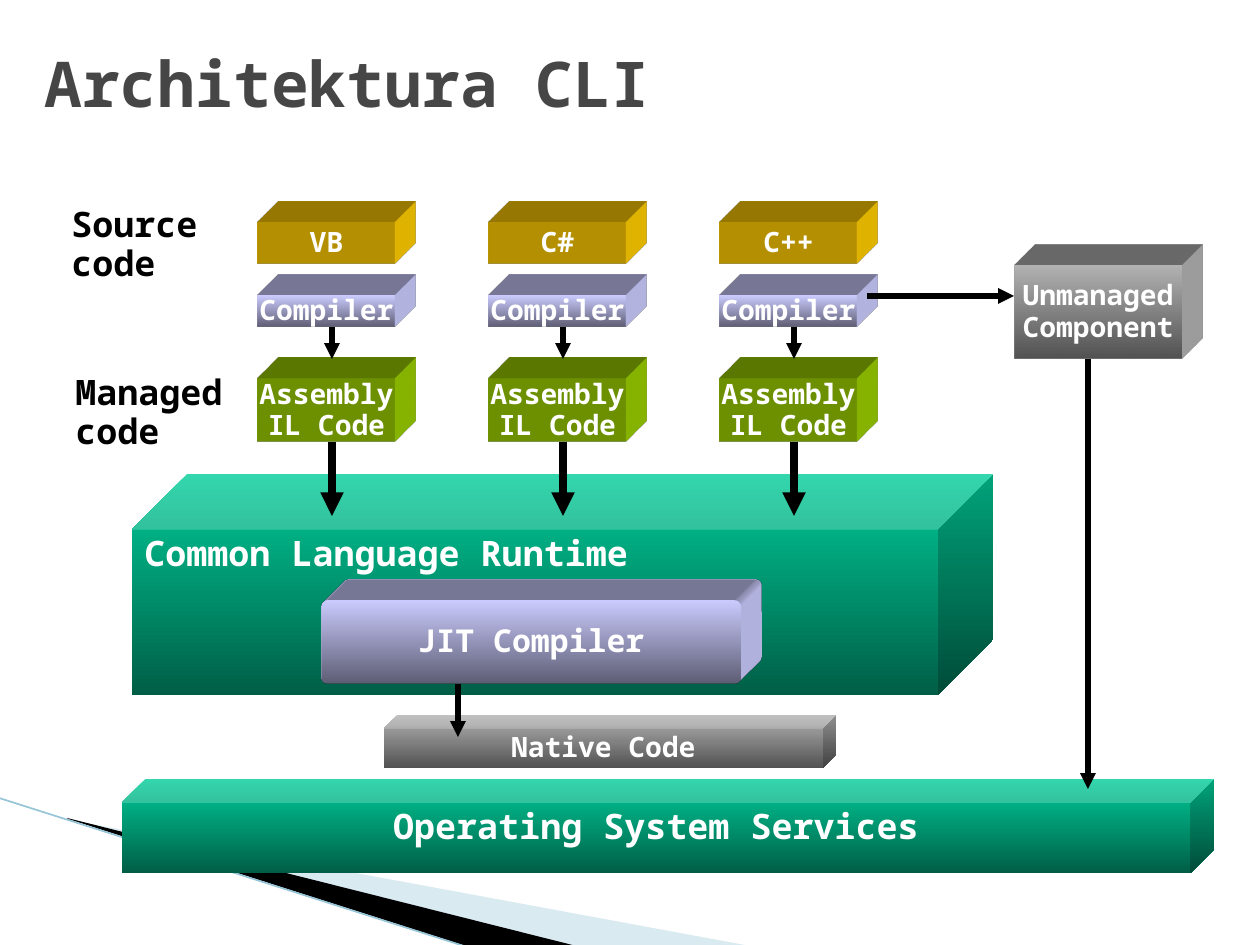
from dataclasses import dataclass

from lxml import etree
from pptx import Presentation
from pptx import util as u
from pptx.dml.color import RGBColor
from pptx.enum import shapes, text
from pptx.oxml import parse_xml
from pptx.oxml.ns import nsdecls, qn

PX = 914400 / 126  # EMU in one px


@dataclass(frozen=True)
class Theme:
    font: str = "Noto Sans Mono"
    white: str = "FFFFFF"
    black: str = "000000"
    grey: str = "464646"
    gold: str = "FFCC00"
    lime: str = "99CC00"
    pale: str = "A0CBDC"
    edge: str = "97C5D8"
    lilac: tuple = ("CCCCFF", "5E5E75")
    teal: tuple = ("00CC99", "005E46")
    steel: tuple = ("B2B2B2", "525252")
    title: int = 36
    large: int = 20
    mid: int = 18
    small: int = 16
    spacing: float = 0.93


def emu(*lengths):
    return [round(n * PX) for n in lengths]


def rgb(color):
    return RGBColor.from_string(color)


class Deck:
    def __init__(self, theme):
        self.theme = theme
        self.file = Presentation()
        self.file.slide_width, self.file.slide_height = emu(1260, 945)
        self.slide = self.file.slides.add_slide(self.file.slide_layouts[6])
        self.shapes = self.slide.shapes

    def letter(self, shape, words, size, color, align, anchor, wrap=False, spacing=None):
        """Set the styled words into a shape."""
        frame = shape.text_frame
        frame.word_wrap = wrap
        frame.vertical_anchor = anchor
        frame.text = words
        for par in frame.paragraphs:
            par.alignment = align
            par.line_spacing = spacing or self.theme.spacing
            par.font.name = self.theme.font
            par.font.size = u.Pt(size)
            par.font.bold = True
            par.font.color.rgb = rgb(color)

    def label(self, box, words, size, color, anchor=text.MSO_ANCHOR.TOP, spacing=None):
        shape = self.shapes.add_textbox(*emu(*box))
        self.letter(shape, words, size, color, text.PP_ALIGN.LEFT, anchor, True, spacing)

    def paint(self, shape, color):
        """Fill with one colour, or top to bottom with a pair."""
        shape.shadow.inherit = False
        shape.line.fill.background()
        if isinstance(color, str):
            shape.fill.solid()
            shape.fill.fore_color.rgb = rgb(color)
            return
        shape.fill.gradient()
        shape.fill.gradient_angle = 270
        for stop, tone in zip(shape.fill.gradient_stops, color):
            stop.color.rgb = rgb(tone)

    def cube(self, box, words, color, size, align=text.PP_ALIGN.CENTER,
             anchor=text.MSO_ANCHOR.TOP):
        shape = self.shapes.add_shape(shapes.MSO_SHAPE.CUBE, *emu(*box))
        self.paint(shape, color)
        self.letter(shape, words, size, self.theme.white, align, anchor)

    def block(self, box, words, color, size, corner=0):
        """Draw a rectangle extruded to the top right."""
        shape = self.shapes.add_shape(shapes.MSO_SHAPE.ROUNDED_RECTANGLE, *emu(*box))
        shape.adjustments[0] = corner
        self.paint(shape, color)
        side = color if isinstance(color, str) else color[0]
        props = shape.element.spPr
        props.append(parse_xml(
            f'<a:scene3d {nsdecls("a")}><a:camera prst="legacyObliqueTopRight"/>'
            '<a:lightRig rig="legacyFlat3" dir="b"/></a:scene3d>'))
        props.append(parse_xml(
            f'<a:sp3d {nsdecls("a")} extrusionH="430200" prstMaterial="legacyMatte">'
            f'<a:extrusionClr><a:srgbClr val="{side}"/></a:extrusionClr></a:sp3d>'))
        self.letter(shape, words, size, self.theme.white,
                    text.PP_ALIGN.CENTER, text.MSO_ANCHOR.MIDDLE)

    def line(self, ends, color, width):
        line = self.shapes.add_connector(shapes.MSO_CONNECTOR.STRAIGHT, *emu(*ends))
        line.line.color.rgb = rgb(color)
        line.line.width = u.Pt(width)
        etree.SubElement(line.element.spPr, qn("a:effectLst"))
        return line

    def arrow(self, ends, width=3):
        line = self.line(ends, self.theme.black, width)
        etree.SubElement(line.element.spPr.find(qn("a:ln")), qn("a:tailEnd"),
                         type="triangle")

    def sweep(self, points, color, alpha=100):
        pen = self.shapes.build_freeform(*points[0], scale=PX)
        pen.add_line_segments(points[1:], close=True)
        shape = pen.convert_to_shape()
        self.paint(shape, color)
        if alpha < 100:
            tone = shape.element.spPr.find(qn("a:solidFill"))[0]
            etree.SubElement(tone, qn("a:alpha"), val=str(alpha * 1000))


def main():
    look = Theme()
    deck = Deck(look)

    deck.sweep([(69, 820), (750, 946), (575, 946), (69, 819)], look.pale, 40)
    deck.sweep([(67, 818), (576, 946), (469, 947), (68, 819)], look.black)
    deck.line((-1, 798, 467, 947), look.edge, 0.95)

    deck.label((32, 38, 1207, 88), "Architektura CLI", look.title, look.grey,
               text.MSO_ANCHOR.MIDDLE, 1.0)
    deck.label((59, 200, 179, 93), "Source code", look.large, look.black)
    deck.label((63, 368, 176, 93), "Managed\ncode", look.large, look.black)

    deck.cube((122, 779, 1092, 94), "Operating System Services", look.teal, look.large)
    deck.cube((132, 474, 861, 221), "Common Language Runtime", look.teal, look.large,
              text.PP_ALIGN.LEFT)
    deck.block((321, 600, 420, 84), "JIT Compiler", look.lilac, look.mid, 0.08)
    deck.cube((384, 715, 452, 53), "Native Code", look.steel, look.small,
              anchor=text.MSO_ANCHOR.MIDDLE)

    stack = (
        (222, 42, None, look.gold),
        (295, 32, "Compiler", look.lilac),
        (379, 63, "Assembly\nIL Code", look.lime),
    )
    for col, lang in enumerate(("VB", "C#", "C++")):
        left = 258 + 231 * col
        for top, high, words, color in stack:
            deck.block((left, top, 137, high), words or lang, color, look.small)
        mid = left + 74
        deck.arrow((mid, 327, mid, 359))
        deck.arrow((mid, 442, mid, 516), 4.5)

    deck.arrow((867, 296, 1014, 296))
    deck.block((1014, 265, 168, 94), "Unmanaged\nComponent", look.steel, look.small)
    deck.arrow((1088, 359, 1088, 789))
    deck.arrow((458, 684, 458, 737))

    deck.file.save("out.pptx")


if __name__ == "__main__":
    main()
